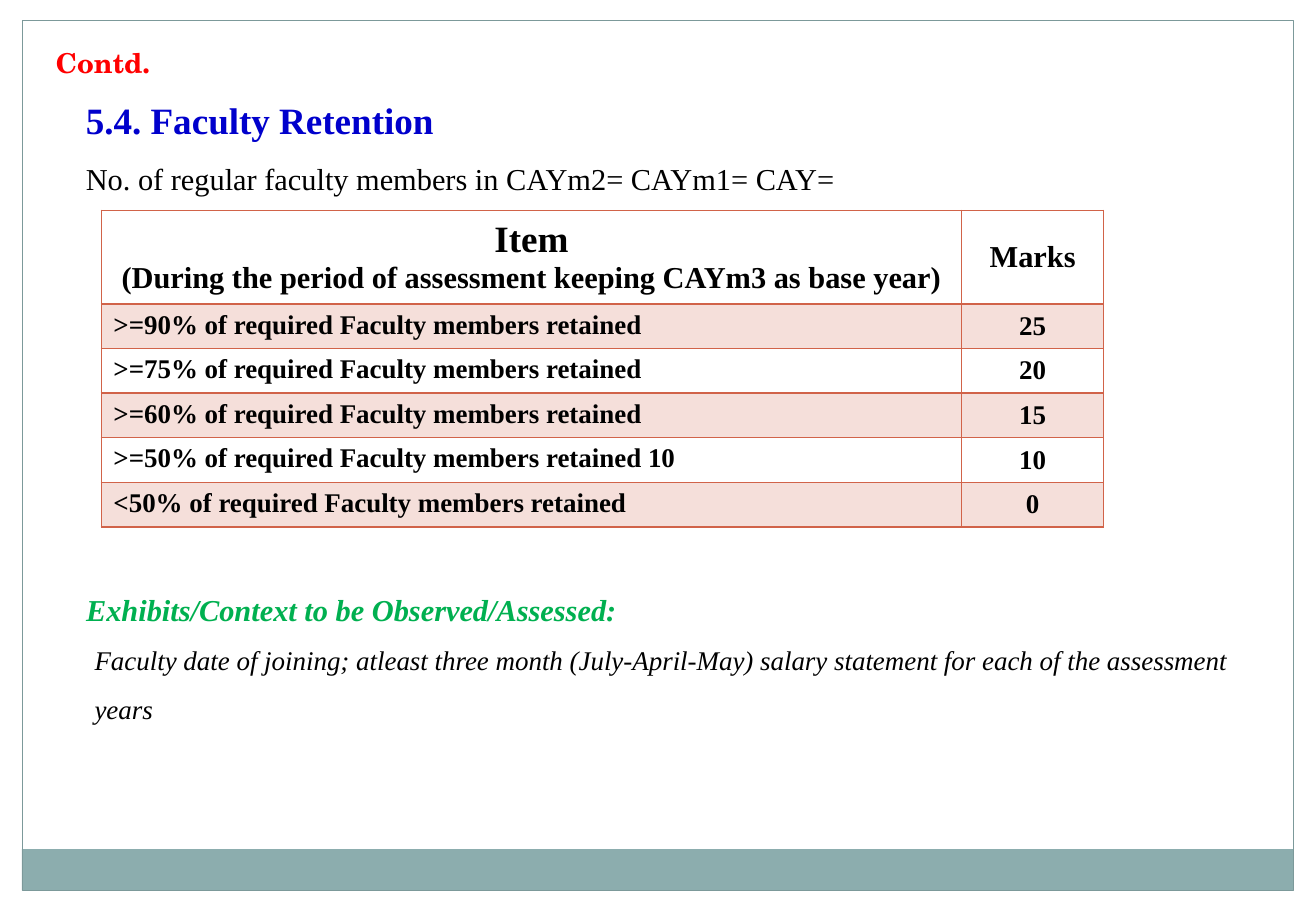
from dataclasses import dataclass

from lxml.etree import SubElement
from pptx import Presentation
from pptx.dml.color import RGBColor as RGB
from pptx.enum.shapes import MSO_SHAPE as SHAPE
from pptx.enum.text import MSO_ANCHOR as ANCHOR, MSO_AUTO_SIZE as FIT, PP_ALIGN as ALIGN
from pptx.oxml.ns import qn
from pptx.util import Inches, Pt


@dataclass(frozen=True)
class Theme:
    serif: str = "Times New Roman"
    school: str = "TeX Gyre Schola"
    ink: str = "000000"
    paper: str = "FFFFFF"
    red: str = "FF0000"
    blue: str = "0000CC"
    green: str = "00B050"
    bar: str = "8CADAE"
    frame: str = "7C999A"
    border: str = "D16349"
    band: str = "F5DFDA"
    heading: float = 22
    lead: float = 18
    body: float = 16
    tag: float = 16.2


theme = Theme()
deck = Presentation()
deck.slide_width, deck.slide_height = Inches(10.83), Inches(7.5)
slide = deck.slides.add_slide(deck.slide_layouts[5])


def area(left, top, width, height):
    across, down = deck.slide_width / 100, deck.slide_height / 100
    return [int(v) for v in (left * across, top * down, width * across, height * down)]


def write(paragraph, text, size, color=theme.ink, bold=True, italic=False,
          face=theme.serif, align=ALIGN.LEFT, spacing=1.0):
    paragraph.alignment = align
    paragraph.line_spacing = spacing
    run = paragraph.add_run()
    run.text = text
    run.font.name, run.font.size = face, Pt(size)
    run.font.bold, run.font.italic = bold, italic
    run.font.color.rgb = RGB.from_string(color)


panels = [
    ((0, 0, 100, 2.27), theme.paper),
    ((98.34, 0, 1.66, 100), theme.paper),
    ((0, 0, 1.66, 100), theme.paper),
    ((1.66, 93.2, 96.58, 4.53), theme.bar),
]
for bounds, color in panels:
    panel = slide.shapes.add_shape(SHAPE.RECTANGLE, *area(*bounds))
    panel.shadow.inherit = False
    panel.fill.solid()
    panel.fill.fore_color.rgb = RGB.from_string(color)
    panel.line.fill.background()

frame = slide.shapes.add_shape(SHAPE.RECTANGLE, *area(1.7, 2.27, 96.6, 95.47))
frame.shadow.inherit = False
frame.fill.background()
frame.line.color.rgb = RGB.from_string(theme.frame)
frame.line.width = Pt(0.75)

title = slide.shapes.title
title.left, title.top, title.width, title.height = area(3.32, 4.4, 93.35, 4.4)
title.text_frame.auto_size = FIT.NONE
title.text_frame.vertical_anchor = ANCHOR.TOP
write(title.text_frame.paragraphs[0], "Contd.", theme.tag, theme.red, face=theme.school)

criterion = slide.shapes.add_textbox(*area(5.61, 10.06, 78.3, 12.4)).text_frame
criterion.word_wrap = True
write(criterion.paragraphs[0], "5.4. Faculty Retention", theme.heading, theme.blue)
write(criterion.add_paragraph(), "No. of regular faculty members in CAYm2= CAYm1= CAY=",
      theme.lead, bold=False, spacing=1.5)

exhibits = slide.shapes.add_textbox(*area(5.63, 62.27, 91.04, 18.13)).text_frame
exhibits.word_wrap = True
write(exhibits.paragraphs[0], "Exhibits/Context to be Observed/Assessed:", theme.lead,
      theme.green, italic=True, align=ALIGN.JUSTIFY, spacing=1.5)
evidence = exhibits.add_paragraph()
write(evidence, "Faculty date of joining; atleast three month (July-April-May) salary statement "
      "for each of the assessment years", theme.body, bold=False, italic=True, spacing=1.5)
evidence_format = evidence._p.get_or_add_pPr()
evidence_format.set("marL", str(Inches(0.07)))
evidence_format.set("indent", "0")

scale = [
    (">=90% of required Faculty members retained", "25"),
    (">=75% of required Faculty members retained", "20"),
    (">=60% of required Faculty members retained", "15"),
    (">=50% of required Faculty members retained 10", "10"),
    ("<50% of required Faculty members retained", "0"),
]
header_height, level_height = 10.27, 4.88
table_height = header_height + level_height * len(scale)
marks = slide.shapes.add_table(len(scale) + 1, 2, *area(7.7, 23.1, 76.17, table_height)).table
marks.first_row = marks.horz_banding = False
for column, share in zip(marks.columns, (65.37, 10.8)):
    column.width = int(deck.slide_width * share / 100)
for index, row in enumerate(marks.rows):
    row.height = int(deck.slide_height * (level_height if index else header_height) / 100)

item_header, marks_header = marks.rows[0].cells
write(item_header.text_frame.paragraphs[0], "Item", theme.heading, align=ALIGN.CENTER)
write(item_header.text_frame.add_paragraph(),
      "(During the period of assessment keeping CAYm3 as base year)",
      theme.lead, align=ALIGN.CENTER)
write(marks_header.text_frame.paragraphs[0], "Marks", theme.lead, align=ALIGN.CENTER)
for index, (level, score) in enumerate(scale, 1):
    level_cell, score_cell = marks.rows[index].cells
    write(level_cell.text_frame.paragraphs[0], level, theme.body, align=ALIGN.JUSTIFY)
    write(score_cell.text_frame.paragraphs[0], score, theme.body, align=ALIGN.CENTER)

for index, row in enumerate(marks.rows):
    for position, cell in enumerate(row.cells):
        cell.vertical_anchor = ANCHOR.TOP if index and position == 0 else ANCHOR.MIDDLE
        properties = cell._tc.get_or_add_tcPr()
        for side in ("lnL", "lnR", "lnT", "lnB"):
            heavy = (index, side) in ((0, "lnB"), (1, "lnT"))
            edge = SubElement(properties, qn(f"a:{side}"), w=str(Pt(2 if heavy else 1)))
            SubElement(SubElement(edge, qn("a:solidFill")), qn("a:srgbClr"), val=theme.border)
        if index % 2:
            cell.fill.solid()
            cell.fill.fore_color.rgb = RGB.from_string(theme.band)
        else:
            cell.fill.background()

deck.save("out.pptx")
